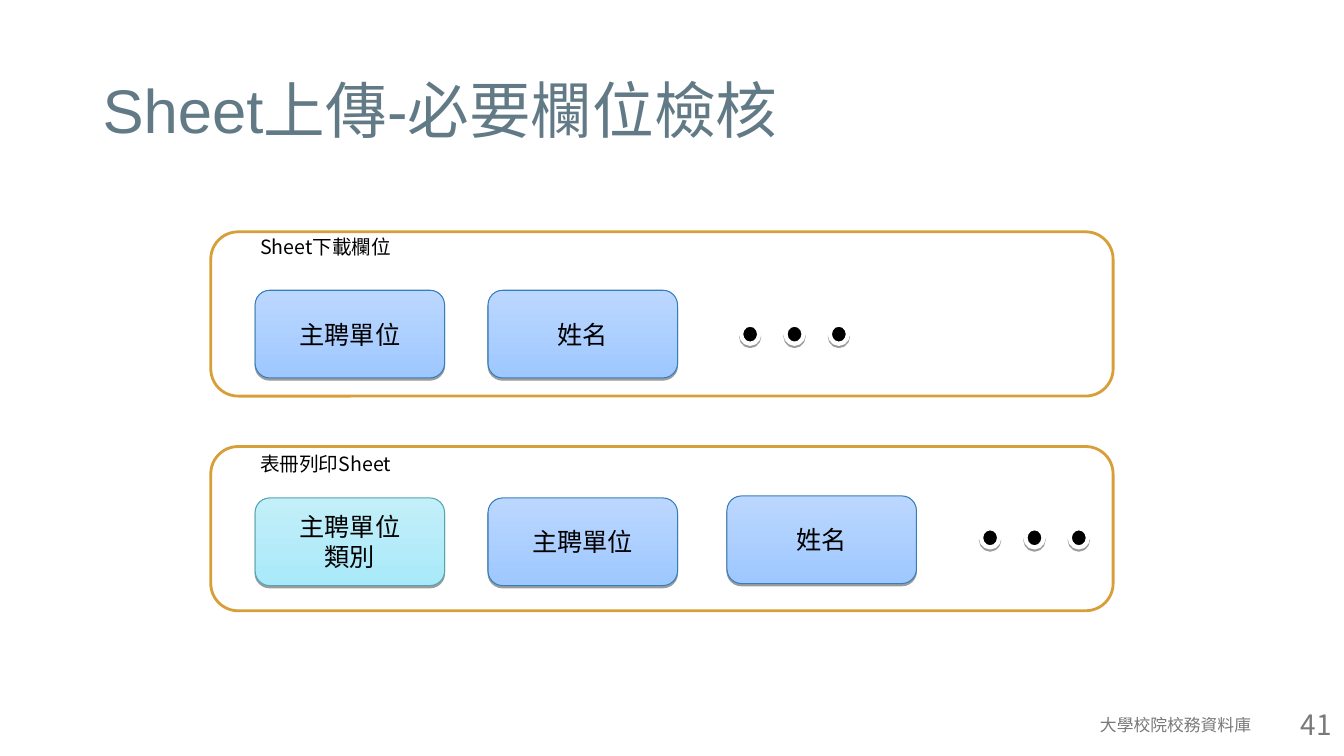
from dataclasses import dataclass

import lxml.etree
import pptx
import pptx.dml.color
import pptx.enum.dml
import pptx.enum.shapes
import pptx.enum.text
import pptx.oxml.ns
import pptx.shapes.autoshape
import pptx.slide
import pptx.text.text
import pptx.util

Inches = pptx.util.Inches
Align = pptx.enum.text.PP_ALIGN
Anchor = pptx.enum.text.MSO_ANCHOR
Preset = pptx.enum.shapes.MSO_SHAPE


@dataclass(frozen=True)
class Theme:
    title_font: str = "Arial"
    body_font: str = "Noto Sans CJK SC"
    footer_font: str = "Noto Sans CJK TC"
    title_size: int = 44
    field_size: int = 18
    caption_size: int = 14
    footer_size: int = 12
    number_size: int = 20
    title: str = "617A86"
    ink: str = "000000"
    footer: str = "797979"
    paper: str = "FFFFFF"
    panel_line: str = "D89F39"


@dataclass(frozen=True)
class Palette:
    bottom: str
    top: str
    line: str


@dataclass(frozen=True)
class Field:
    left: float
    top: float
    lines: tuple[str, ...]
    palette: Palette


@dataclass(frozen=True)
class Panel:
    top: float
    caption: str
    caption_top: float
    fields: tuple[Field, ...]
    dots_left: float
    dots_top: float


@dataclass(frozen=True)
class Label:
    text: str
    area: tuple[float, float, float, float]
    font: str
    size: int
    color: str
    insets: tuple[float, float]
    align: Align = Align.LEFT
    anchor: Anchor = Anchor.MIDDLE
    line_spacing: float = 1.0


THEME = Theme()
BLUE = Palette("9EC8FF", "BCD7FF", "357EB9")
CYAN = Palette("A9E9F9", "C3EFF9", "53A5B3")
FIELD_INSETS = (0.05, 0.03)
FOOTER_INSETS = (0.12, 0.06)
DOT_PITCH = 0.44

PANELS = (
    Panel(4.43, "表冊列印Sheet", 4.45, (
        Field(2.53, 4.94, ("主聘單位", "類別"), CYAN),
        Field(4.84, 4.94, ("主聘單位",), BLUE),
        Field(7.21, 4.92, ("姓名",), BLUE),
    ), 9.73, 5.24),
    Panel(2.3, "Sheet下載欄位", 2.3, (
        Field(2.53, 2.88, ("主聘單位",), BLUE),
        Field(4.84, 2.88, ("姓名",), BLUE),
    ), 7.35, 3.22),
)

LABELS = (
    Label("Sheet上傳-必要欄位檢核", (0.92, 0.4, 11.5, 1.45), THEME.title_font,
          THEME.title_size, THEME.title, (0.1, 0.05), line_spacing=0.9),
    Label("大學校院校務資料庫", (6.86, 6.99, 5.67, 0.4), THEME.footer_font,
          THEME.footer_size, THEME.footer, FOOTER_INSETS, Align.RIGHT),
    Label("41", (12.67, 6.99, 0.66, 0.4), THEME.footer_font,
          THEME.number_size, THEME.footer, FOOTER_INSETS, Align.RIGHT),
)


def rgb(color: str) -> pptx.dml.color.RGBColor:
    return pptx.dml.color.RGBColor.from_string(color)


def write_text(frame: pptx.text.text.TextFrame, lines: tuple[str, ...], font: str,
               size: int, color: str, insets: tuple[float, float], align: Align,
               anchor: Anchor, line_spacing: float = 1.0) -> None:
    frame.word_wrap = True
    frame.vertical_anchor = anchor
    frame.margin_left = frame.margin_right = Inches(insets[0])
    frame.margin_top = frame.margin_bottom = Inches(insets[1])
    for index, line in enumerate(lines):
        paragraph = frame.paragraphs[0] if index == 0 else frame.add_paragraph()
        paragraph.text = line
        paragraph.alignment = align
        paragraph.line_spacing = line_spacing
        paragraph.font.name = font
        paragraph.font.size = pptx.util.Pt(size)
        paragraph.font.color.rgb = rgb(color)
        # East Asian glyphs use the same typeface
        defaults = paragraph._p.pPr.find(pptx.oxml.ns.qn("a:defRPr"))
        lxml.etree.SubElement(defaults, pptx.oxml.ns.qn("a:ea"), typeface=font)


def add_label(page: pptx.slide.Slide, label: Label) -> None:
    box = page.shapes.add_textbox(*map(Inches, label.area))
    write_text(box.text_frame, (label.text,), label.font, label.size, label.color,
               label.insets, label.align, label.anchor, label.line_spacing)


def add_outlined(page: pptx.slide.Slide, preset: Preset,
                 area: tuple[float, float, float, float], line: str,
                 width: float) -> pptx.shapes.autoshape.Shape:
    shape = page.shapes.add_shape(preset, *map(Inches, area))
    shape.shadow.inherit = False
    shape.line.color.rgb = rgb(line)
    shape.line.width = pptx.util.Pt(width)
    return shape


def drop_shadow(shape: pptx.shapes.autoshape.Shape) -> None:
    qn = pptx.oxml.ns.qn
    effects = shape._element.spPr.find(qn("a:effectLst"))
    shadow = lxml.etree.SubElement(
        effects, qn("a:outerShdw"), blurRad="0", dist=str(pptx.util.Pt(1.6)),
        dir="5400000", rotWithShape="0")
    color = lxml.etree.SubElement(shadow, qn("a:srgbClr"), val=THEME.ink)
    lxml.etree.SubElement(color, qn("a:alpha"), val="38000")


def add_field(page: pptx.slide.Slide, field: Field) -> None:
    area = (field.left, field.top, 1.88, 0.87)
    box = add_outlined(page, Preset.ROUNDED_RECTANGLE, area, field.palette.line, 0.75)
    box.fill.gradient()
    box.fill.gradient_angle = 90
    for stop, color in zip(box.fill.gradient_stops,
                           (field.palette.bottom, field.palette.top)):
        stop.color.rgb = rgb(color)
    drop_shadow(box)
    write_text(box.text_frame, field.lines, THEME.body_font, THEME.field_size,
               THEME.ink, FIELD_INSETS, Align.CENTER, Anchor.MIDDLE)


def add_panel(page: pptx.slide.Slide, panel: Panel) -> None:
    # Frame
    frame = add_outlined(page, Preset.ROUNDED_RECTANGLE,
                         (2.09, panel.top, 8.95, 1.63), THEME.panel_line, 2)
    frame.fill.solid()
    frame.fill.fore_color.rgb = rgb(THEME.paper)

    # Fields
    for field in panel.fields:
        add_field(page, field)

    # Ellipsis dots
    for index in range(3):
        left = panel.dots_left + index * DOT_PITCH
        dot = add_outlined(page, Preset.OVAL, (left, panel.dots_top, 0.18, 0.19),
                           THEME.paper, 3)
        dot.fill.solid()
        dot.fill.fore_color.rgb = rgb(THEME.ink)
        drop_shadow(dot)

    # Caption
    add_label(page, Label(panel.caption, (2.53, panel.caption_top, 2.46, 0.38),
                          THEME.body_font, THEME.caption_size, THEME.ink,
                          FIELD_INSETS, anchor=Anchor.TOP))


def main() -> None:
    deck = pptx.Presentation()
    deck.slide_width, deck.slide_height = Inches(13.33), Inches(7.5)
    page = deck.slides.add_slide(deck.slide_layouts[6])
    for panel in PANELS:
        add_panel(page, panel)
    # Title and footer
    for label in LABELS:
        add_label(page, label)
    deck.save("out.pptx")


if __name__ == "__main__":
    main()
